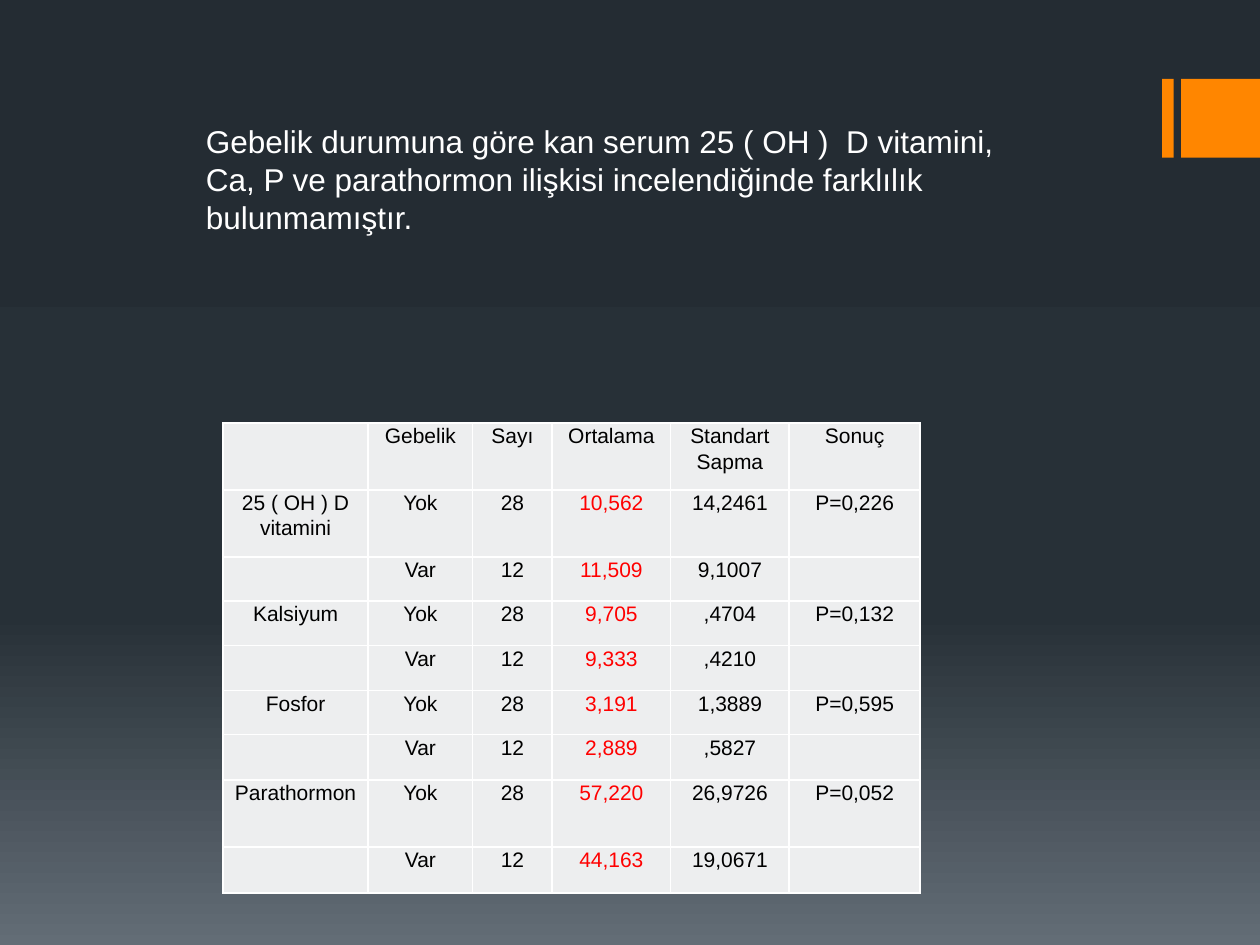
from copy import deepcopy

from pptx import Presentation
from pptx import util as u
from pptx.dml.color import RGBColor
from pptx.enum import shapes, text
from pptx.oxml import parse_xml
from pptx.oxml.ns import nsdecls, qn

WHITE = RGBColor(0xFF, 0xFF, 0xFF)
BLACK = RGBColor(0, 0, 0)
RED = RGBColor(0xFF, 0, 0)
ORANGE = RGBColor(0xFF, 0x86, 0x00)
CELL_GREY = RGBColor(0xED, 0xEE, 0xEF)
BACKDROP = [
    (0, RGBColor(0x24, 0x2C, 0x33)),
    (0.65, RGBColor(0x27, 0x30, 0x37)),
    (1, RGBColor(0x63, 0x6D, 0x76)),
]

SUMMARY = (
    "Gebelik durumuna göre kan serum 25 ( OH )  D vitamini, Ca, P ve "
    "parathormon ilişkisi incelendiğinde farklılık bulunmamıştır."
)
HEADER = ["", "Gebelik", "Sayı", "Ortalama", "Standart Sapma", "Sonuç"]
MEASURES = [
    ("25 ( OH ) D vitamini", "P=0,226", ("10,562", "14,2461"), ("11,509", "9,1007")),
    ("Kalsiyum", "P=0,132", ("9,705", ",4704"), ("9,333", ",4210")),
    ("Fosfor", "P=0,595", ("3,191", "1,3889"), ("2,889", ",5827")),
    ("Parathormon", "P=0,052", ("57,220", "26,9726"), ("44,163", "19,0671")),
]
MEAN_COLUMN = HEADER.index("Ortalama")
COLUMN_WIDTHS = [2.92, 2.11, 1.6, 2.39, 2.39, 2.64]
ROW_HEIGHTS = [1.35, 1.35, 0.89, 0.89, 0.91, 0.89, 0.91, 1.35, 0.93]


def apply(target, values):
    for name, value in values.items():
        setattr(target, name, value)


def write(para, words, size, color):
    span = para.add_run()
    span.text = words
    apply(span.font, {"name": "Arial", "size": u.Pt(size)})
    span.font.color.rgb = color


def paint_background(page):
    fill = page.background.fill
    fill.gradient()
    fill.gradient_angle = 270
    stop_list = page.element.find(".//" + qn("a:gsLst"))
    stop_list.append(deepcopy(stop_list[-1]))
    for stop, (position, color) in zip(fill.gradient_stops, BACKDROP):
        stop.position = position
        stop.color.rgb = color


def add_accent(page, left, top, width, height):
    """Draw a thin bar and, after a gap, a square that ends at the right edge."""
    bar = 0.23
    for x, breadth in ((left, bar), (left + width - height, height)):
        block = page.shapes.add_shape(
            shapes.MSO_SHAPE.RECTANGLE, u.Cm(x), u.Cm(top), u.Cm(breadth), u.Cm(height)
        )
        block.shadow.inherit = False
        block.fill.solid()
        block.fill.fore_color.rgb = ORANGE
        block.line.fill.background()


def add_summary(page, left, top, width, height):
    box = page.shapes.add_textbox(u.Cm(left), u.Cm(top), u.Cm(width), u.Cm(height))
    apply(box.text_frame, {"word_wrap": True, "auto_size": text.MSO_AUTO_SIZE.SHAPE_TO_FIT_TEXT})
    write(box.text_frame.paragraphs[0], SUMMARY, 18, WHITE)


def table_rows():
    rows = [HEADER]
    for name, result, without, with_pregnancy in MEASURES:
        rows.append([name, "Yok", "28", *without, result])
        rows.append(["", "Var", "12", *with_pregnancy, ""])
    return rows


def border_cell(cell):
    properties = cell._tc.get_or_add_tcPr()
    for index, side in enumerate(("lnL", "lnR", "lnT", "lnB")):
        properties.insert(index, parse_xml(
            f'<a:{side} {nsdecls("a")} w="{u.Pt(1)}"><a:solidFill>'
            f'<a:srgbClr val="{WHITE}"/></a:solidFill></a:{side}>'
        ))


def format_cell(cell, words, color):
    apply(cell, {
        "margin_left": u.Cm(0.18), "margin_right": u.Cm(0.18),
        "margin_top": 0, "margin_bottom": 0,
    })
    cell.fill.solid()
    cell.fill.fore_color.rgb = CELL_GREY
    border_cell(cell)
    if words:
        para = cell.text_frame.paragraphs[0]
        apply(para, {"alignment": text.PP_ALIGN.CENTER, "line_spacing": 1.07})
        write(para, words, 12, color)


def add_results(page, left, top):
    rows = table_rows()
    table = page.shapes.add_table(
        len(rows), len(HEADER), u.Cm(left), u.Cm(top),
        u.Cm(sum(COLUMN_WIDTHS)), u.Cm(sum(ROW_HEIGHTS)),
    ).table
    for column, width in zip(table.columns, COLUMN_WIDTHS):
        column.width = u.Cm(width)
    for row, height in zip(table.rows, ROW_HEIGHTS):
        row.height = u.Cm(height)
    for r, row in enumerate(rows):
        for c, words in enumerate(row):
            color = RED if r > 0 and c == MEAN_COLUMN else BLACK
            format_cell(table.cell(r, c), words, color)


def main():
    deck = Presentation()
    apply(deck, {"slide_width": u.Cm(25.4), "slide_height": u.Cm(19.05)})
    page = deck.slides.add_slide(deck.slide_layouts[6])
    paint_background(page)
    add_accent(page, 23.43, 1.59, 1.97, 1.59)
    add_results(page, 4.5, 8.53)
    add_summary(page, 3.9, 2.34, 17, 2.56)
    deck.save("out.pptx")


if __name__ == "__main__":
    main()
